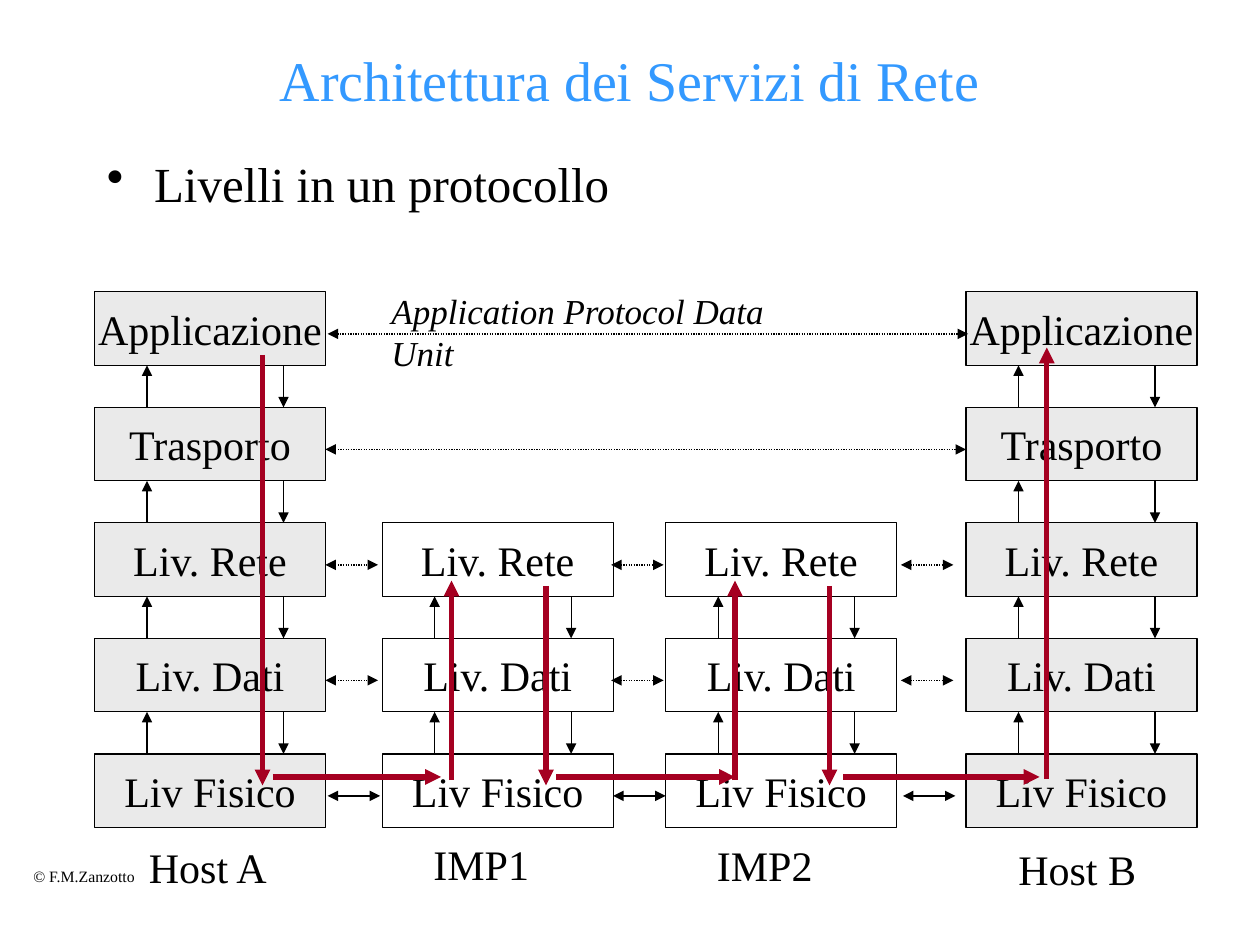
from lxml import etree
from pptx import Presentation
from pptx.dml.color import RGBColor
from pptx.enum.dml import MSO_LINE
from pptx.enum.shapes import MSO_CONNECTOR, MSO_SHAPE
from pptx.enum.text import MSO_ANCHOR, MSO_AUTO_SIZE, PP_ALIGN
from pptx.oxml.ns import qn
from pptx.util import Inches, Pt

BLACK = RGBColor(0x00, 0x00, 0x00)
BLUE = RGBColor(0x33, 0x99, 0xFF)
GRAY = RGBColor(0xEA, 0xEA, 0xEA)
RED = RGBColor(0xA5, 0x00, 0x21)

# Grid lengths are twelfths of an inch: the slide is 120 by 90 cells.
TOP, PITCH = 27.8, 11
BOX_WIDTH, BOX_HEIGHT = 22, 7
UP, DOWN = 5, 18  # offsets of the arrows between layers
PEER = 4  # offset of the peer arrows below the top of a layer
LAYERS = ["Applicazione", "Trasporto", "Liv. Rete", "Liv. Dati", "Liv Fisico"]
# left, first layer, fill
HOST_A, HOST_B = (9, 0, GRAY), (92, 0, GRAY)
IMP_1, IMP_2 = (36.4, 2, None), (63.4, 2, None)


def cells(count):
    return Inches(count / 12)


def layer_top(layer):
    return TOP + layer * PITCH


class NetworkSlide:
    font_name = "Times New Roman"

    def __init__(self, presentation):
        self.slide = presentation.slides.add_slide(presentation.slide_layouts[5])
        self.shapes = self.slide.shapes

    def style(self, paragraph, size, color=BLACK, italic=False):
        paragraph.font.name = self.font_name
        paragraph.font.size = Pt(size)
        paragraph.font.color.rgb = color
        paragraph.font.italic = italic

    def title(self, text, left, top, width, height):
        title = self.shapes.title
        title.left, title.top = cells(left), cells(top)
        title.width, title.height = cells(width), cells(height)
        frame = title.text_frame
        frame.text = text
        frame.auto_size = MSO_AUTO_SIZE.NONE
        frame.vertical_anchor = MSO_ANCHOR.MIDDLE
        frame.paragraphs[0].alignment = PP_ALIGN.CENTER
        self.style(frame.paragraphs[0], 32, BLUE)

    def text(self, text, left, top, width, height, size, italic=False):
        box = self.shapes.add_textbox(cells(left), cells(top), cells(width), cells(height))
        frame = box.text_frame
        frame.text = text
        frame.word_wrap = False
        frame.auto_size = MSO_AUTO_SIZE.SHAPE_TO_FIT_TEXT
        self.style(frame.paragraphs[0], size, italic=italic)

    def bullet(self, text, left, top, width, height):
        box = self.shapes.add_textbox(cells(left), cells(top), cells(width), cells(height))
        box.text_frame.word_wrap = True
        paragraph = box.text_frame.paragraphs[0]
        paragraph.text = text
        properties = paragraph._p.get_or_add_pPr()
        properties.set("marL", str(cells(4.5)))
        properties.set("indent", str(-cells(4.5)))
        etree.SubElement(properties, qn("a:buChar")).set("char", "•")
        self.style(paragraph, 28)

    def box(self, text, left, top, fill):
        shape = self.shapes.add_shape(
            MSO_SHAPE.RECTANGLE, cells(left), cells(top), cells(BOX_WIDTH), cells(BOX_HEIGHT)
        )
        shape.shadow.inherit = False
        if fill is None:
            shape.fill.background()
        else:
            shape.fill.solid()
            shape.fill.fore_color.rgb = fill
        shape.line.color.rgb = BLACK
        shape.line.width = Pt(0.75)
        frame = shape.text_frame
        frame.text = text
        frame.word_wrap = False
        frame.vertical_anchor = MSO_ANCHOR.MIDDLE
        frame.paragraphs[0].alignment = PP_ALIGN.CENTER
        self.style(frame.paragraphs[0], 24)

    def arrow(self, start, end, color=BLACK, width=0.75, both=False, dotted=False, shapes=None):
        connector = (shapes or self.shapes).add_connector(
            MSO_CONNECTOR.STRAIGHT, *(cells(value) for value in start + end)
        )
        connector.line.color.rgb = color
        connector.line.width = Pt(width)
        if dotted:
            connector.line.dash_style = MSO_LINE.ROUND_DOT
        line = connector.line._get_or_add_ln()
        for name in ("a:headEnd", "a:tailEnd") if both else ("a:tailEnd",):
            etree.SubElement(line, qn(name)).set("type", "triangle")
        etree.SubElement(connector._element.spPr, qn("a:effectLst"))

    def stack(self, left, first_layer, fill):
        """Draw one node's layers and the arrows between neighbouring ones."""
        for layer in range(first_layer, len(LAYERS)):
            top = layer_top(layer)
            self.box(LAYERS[layer], left, top, fill)
            if layer > first_layer:
                above = top - PITCH + BOX_HEIGHT
                self.arrow((left + DOWN, above), (left + DOWN, top))
                self.arrow((left + UP, top), (left + UP, above))

    def peer_arrow(self, layer, left, length):
        y = layer_top(layer) + PEER
        physical = layer == len(LAYERS) - 1
        self.arrow((left, y), (left + length, y), both=True, dotted=not physical)

    def data_route(self):
        """Trace the red route from host A through both IMPs to host B."""
        group = self.shapes.add_group_shape().shapes
        segments = [((25, 33.8), (25, 74.8))]
        for left, _, _ in (IMP_1, IMP_2):
            segments.append(((left + 15.6, 55.8), (left + 15.6, 74.8)))
            segments.append(((left + 6.6, 74.3), (left + 6.6, 55.3)))
        for start, end in ((26, 42), (53, 70), (80.3, 99)):
            segments.append(((start, 74), (end, 74)))
        segments.append(((99.7, 74.2), (99.7, 33.1)))
        for start, end in segments:
            self.arrow(start, end, RED, 3, shapes=group)


def main():
    presentation = Presentation()
    presentation.slide_width, presentation.slide_height = Inches(10), Inches(7.5)
    network = NetworkSlide(presentation)
    network.title("Architettura dei Servizi di Rete", 9, 0, 102, 15)
    network.bullet("Livelli in un protocollo", 9, 14, 102, 54)
    network.text("© F.M.Zanzotto", 2, 82, 12.2, 3, 9)

    for node in (HOST_A, IMP_1, IMP_2, HOST_B):
        network.stack(*node)

    network.peer_arrow(0, 31.2, 61)
    network.peer_arrow(1, 31, 61)
    for layer, shift in ((2, 0), (3, 0), (4, 0.2)):
        for left in (31, 58.2, 85.8):
            network.peer_arrow(layer, left + shift, 5)

    network.text("Application Protocol Data Unit", 36.1, 27, 44.6, 5.2, 20, italic=True)
    network.data_route()
    for name, left, top, width in (
        ("Host A", 13, 79.6, 13.9),
        ("IMP1", 40.1, 79.3, 11.5),
        ("IMP2", 67.1, 79.4, 11.5),
        ("Host B", 95.8, 79.7, 13.7),
    ):
        network.text(name, left, top, width, 6, 24)

    presentation.save("out.pptx")


if __name__ == "__main__":
    main()
